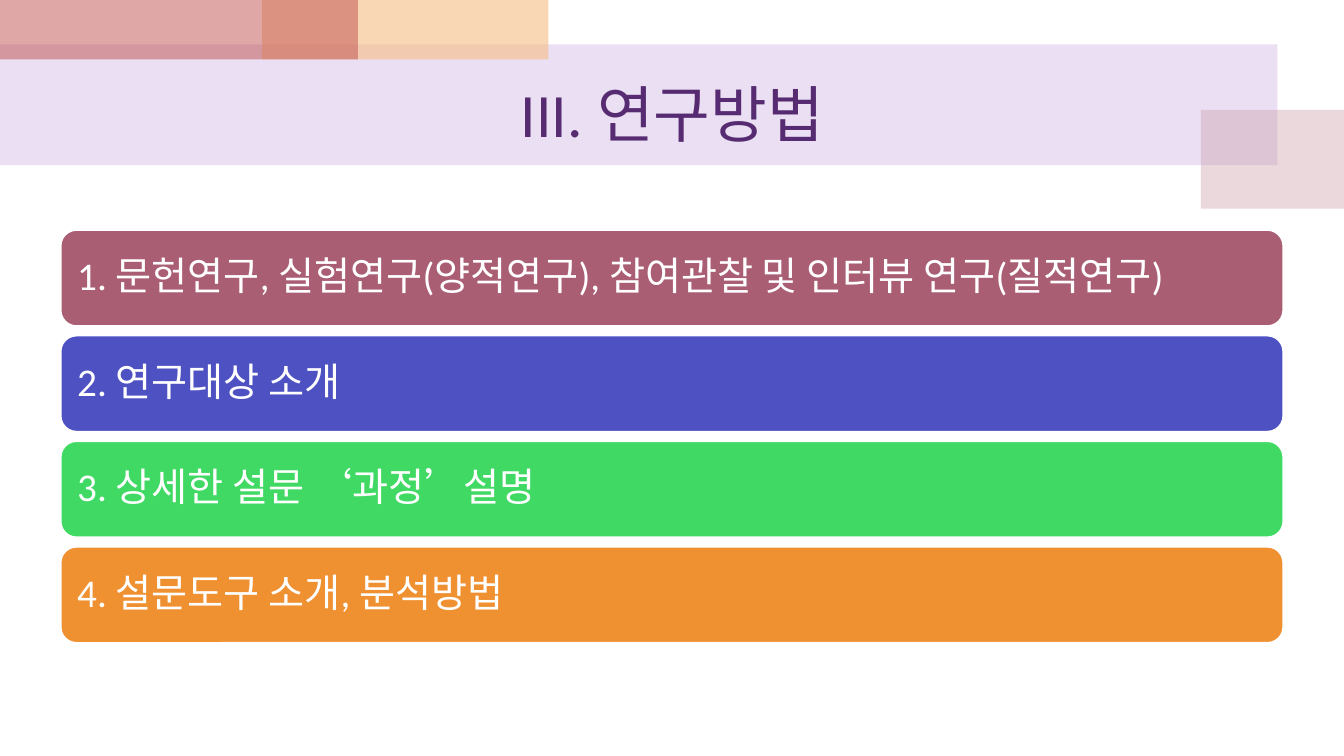
from lxml import etree
from pptx import Presentation
from pptx.dml.color import RGBColor
from pptx.enum import shapes, text
from pptx.oxml import ns
from pptx.util import Inches, Pt

FONT = "Calibri"
COLORS = {
    "band": "BF98D8",
    "rose": "CC9EAC",
    "peach": "F5BC83",
    "red": "C0504D",
    "title": "562B71",
    "white": "FFFFFF",
}
DECORATIONS = [  # left, top, width, height, colour, opacity in percent
    (0, 0.44, 12.67, 1.2, "band", 30),
    (11.91, 1.09, 1.42, 0.98, "rose", 40),
    (2.6, 0, 2.84, 0.59, "peach", 60),
    (0, 0, 3.55, 0.59, "red", 50),
]
METHODS = [
    ("1. 문헌연구, 실험연구(양적연구), 참여관찰 및 인터뷰 연구(질적연구)", "AA5E74"),
    ("2. 연구대상 소개", "4E51C2"),
    ("3. 상세한 설문 ‘과정’설명", "3FD963"),
    ("4. 설문도구 소개, 분석방법", "EF9031"),
]


def add_block(page, kind, box, color):
    block = page.shapes.add_shape(kind, *map(Inches, box))
    block.shadow.inherit = False
    block.fill.solid()
    block.fill.fore_color.rgb = RGBColor.from_string(color)
    block.line.fill.background()
    return block


def set_opacity(block, percent):
    fill_color = block._element.spPr.find(ns.qn("a:solidFill"))[0]
    alpha = etree.SubElement(fill_color, ns.qn("a:alpha"))
    alpha.set("val", str(percent * 1000))


def write_line(frame, words, size, color, align):
    frame.word_wrap = True
    frame.vertical_anchor = text.MSO_ANCHOR.MIDDLE
    para = frame.paragraphs[0]
    para.alignment = align
    span = para.add_run()
    span.text = words
    span.font.name = FONT
    span.font.size = Pt(size)
    span.font.color.rgb = RGBColor.from_string(color)
    return para


def add_decorations(page):
    for *box, color, opacity in DECORATIONS:
        block = add_block(page, shapes.MSO_SHAPE.RECTANGLE, box, COLORS[color])
        set_opacity(block, opacity)


def add_title(page, box):
    title = page.shapes.add_textbox(*map(Inches, box))
    write_line(title.text_frame, "III. 연구방법", 44, COLORS["title"],
               text.PP_ALIGN.CENTER)


def add_methods(page, box, gap):
    """Stack one rounded bar per method, filling the box."""
    left, top, width, height = box
    bar_height = (height - gap * (len(METHODS) - 1)) / len(METHODS)
    for index, (words, color) in enumerate(METHODS):
        bar_top = top + index * (bar_height + gap)
        bar = add_block(page, shapes.MSO_SHAPE.ROUNDED_RECTANGLE,
                        (left, bar_top, width, bar_height), color)
        bar.line.color.rgb = RGBColor.from_string(COLORS["white"])
        bar.line.width = Pt(1.5)
        frame = bar.text_frame
        frame.margin_left = frame.margin_right = Inches(0.12)
        frame.margin_top = frame.margin_bottom = Inches(0.12)
        para = write_line(frame, words, 28, COLORS["white"], text.PP_ALIGN.LEFT)
        para.line_spacing = 0.9


def main():
    deck = Presentation()
    deck.slide_width, deck.slide_height = Inches(13.33), Inches(7.5)
    page = deck.slides.add_slide(deck.slide_layouts[6])
    add_decorations(page)
    add_title(page, (0.67, 0.59, 12, 1.05))
    add_methods(page, (0.6, 2.28, 12.13, 4.1), gap=0.09)
    deck.save("out.pptx")


if __name__ == "__main__":
    main()
